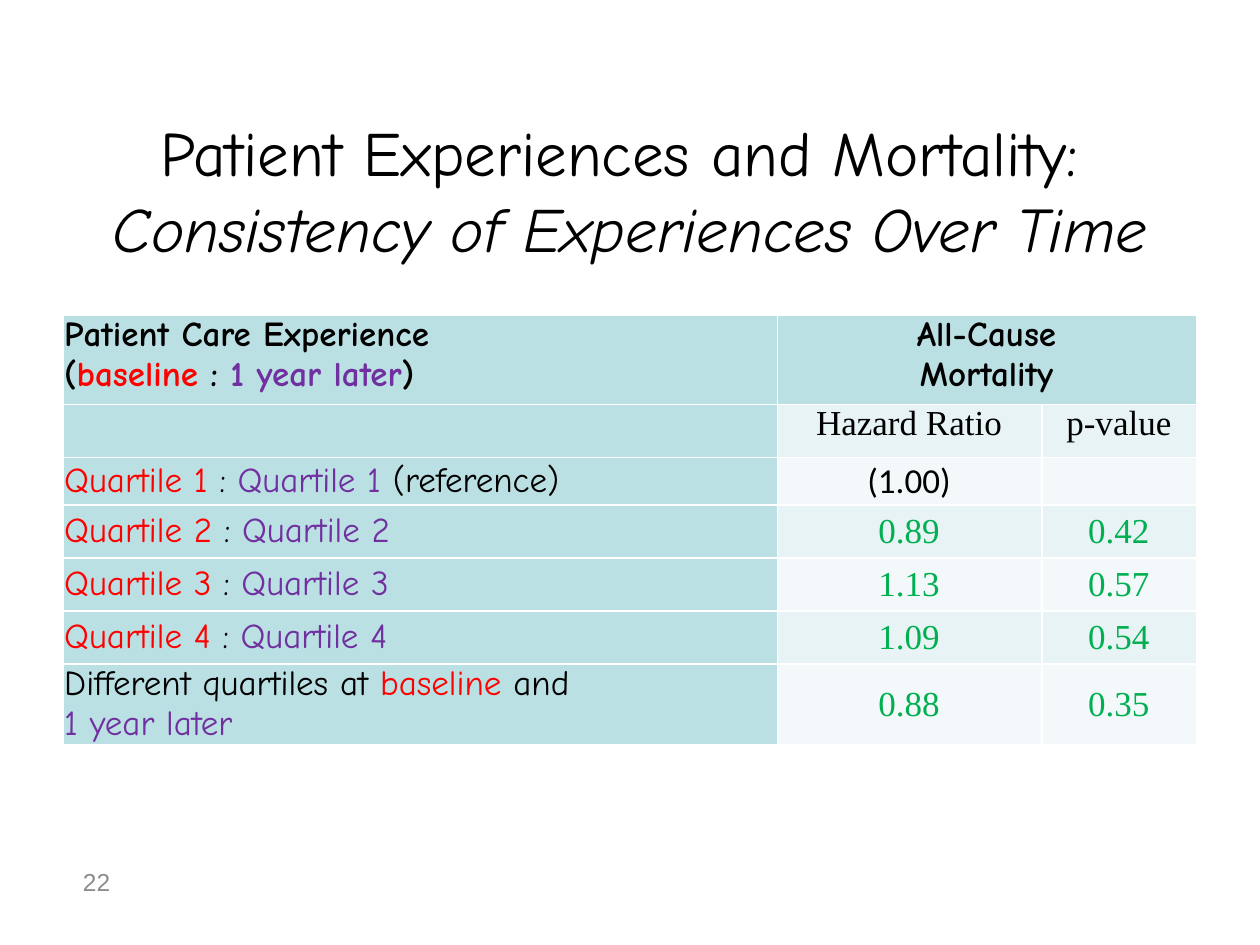
from lxml import etree
from pptx import Presentation
from pptx.dml.color import RGBColor
from pptx.enum.text import MSO_ANCHOR, PP_ALIGN
from pptx.oxml.ns import qn
from pptx.util import Inches, Pt

CENTER, LEFT = PP_ALIGN.CENTER, PP_ALIGN.LEFT
TOP, MIDDLE = MSO_ANCHOR.TOP, MSO_ANCHOR.MIDDLE

BLACK = RGBColor(0x00, 0x00, 0x00)
RED = RGBColor(0xFF, 0x00, 0x00)
PURPLE = RGBColor(0x70, 0x30, 0xA0)
GREEN = RGBColor(0x00, 0xB0, 0x50)
GRAY = RGBColor(0x8C, 0x8C, 0x8C)
TEAL = RGBColor(0xBB, 0xE0, 0xE3)
BANDS = (RGBColor(0xF3, 0xF9, 0xFA), RGBColor(0xE7, 0xF3, 0xF4))

COMIC, TIMES, SANS, ARIAL = "Comic Neue", "Times New Roman", "Calibri", "Arial"

COLUMN_WIDTHS = (5.67, 2.1, 1.23)
ROW_HEIGHTS = (0.71, 0.42, 0.38, 0.42, 0.42, 0.42, 0.43)
RESULTS = (("0.89", "0.42"), ("1.13", "0.57"), ("1.09", "0.54"), ("0.88", "0.35"))


def place(shape, left, top, width, height):
    shape.left, shape.top = Inches(left), Inches(top)
    shape.width, shape.height = Inches(width), Inches(height)


def set_font(font, name, size, color, bold=False):
    font.name, font.size, font.bold = name, Pt(size), bold
    font.color.rgb = color


def add_title(slide):
    title = slide.shapes.title
    place(title, 0, 0.75, 10, 1.5)
    frame = title.text_frame
    frame.vertical_anchor = MIDDLE
    paragraph = frame.paragraphs[0]
    paragraph.alignment = CENTER
    set_font(paragraph.font, COMIC, 36, BLACK)
    paragraph.add_run().text = "Patient Experiences and Mortality: "
    paragraph.add_line_break()
    subtitle = paragraph.add_run()
    subtitle.text = "Consistency of Experiences Over Time"
    subtitle.font.italic = True


def add_borders(cell):
    properties = cell._tc.get_or_add_tcPr()
    for position, side in enumerate(("lnL", "lnR", "lnT", "lnB")):
        line = etree.Element(qn(f"a:{side}"), w=str(Pt(1)))
        fill = etree.SubElement(line, qn("a:solidFill"))
        etree.SubElement(fill, qn("a:srgbClr"), val="FFFFFF")
        properties.insert(position, line)


def style_cell(cell, fill):
    cell.fill.solid()
    cell.fill.fore_color.rgb = fill
    cell.margin_left, cell.margin_right = Inches(0.01), Inches(0.02)
    cell.margin_top = cell.margin_bottom = 0
    cell.text_frame.paragraphs[0].font.size = Pt(20)
    add_borders(cell)


def write_cell(cell, lines, font=COMIC, bold=False, align=LEFT, anchor=MIDDLE):
    """Write lines, each a list of (text, color) runs."""
    cell.vertical_anchor = anchor
    frame = cell.text_frame
    for number, runs in enumerate(lines):
        paragraph = frame.add_paragraph() if number else frame.paragraphs[0]
        paragraph.alignment = align
        set_font(paragraph.font, font, 20, BLACK, bold)
        for text, color in runs:
            run = paragraph.add_run()
            run.text = text
            set_font(run.font, font, 20, color, bold)


def quartile_label(number):
    return [(f"Quartile {number}", RED), (" : ", BLACK), (f"Quartile {number}", PURPLE)]


def write_header(table):
    write_cell(table.cell(0, 0), [
        [("Patient Care Experience", BLACK)],
        [("(", BLACK), ("baseline", RED), (" : ", BLACK),
         ("1 year later", PURPLE), (")", BLACK)],
    ], bold=True, anchor=TOP)
    write_cell(table.cell(0, 1), [[("All-Cause", BLACK)], [("Mortality", BLACK)]],
               bold=True, align=CENTER, anchor=TOP)
    for column, text in enumerate(("Hazard Ratio", "p-value"), start=1):
        write_cell(table.cell(1, column), [[(text, BLACK)]], TIMES, align=CENTER, anchor=TOP)


def write_body(table):
    reference = quartile_label(1) + [(" ", PURPLE), ("(reference)", BLACK)]
    write_cell(table.cell(2, 0), [reference])
    write_cell(table.cell(2, 1), [[("(1.00)", BLACK)]], SANS, align=CENTER)

    labels = [[quartile_label(number)] for number in (2, 3, 4)]
    labels.append([
        [("Different quartiles at ", BLACK), ("baseline", RED), (" and", BLACK)],
        [("1 year later", PURPLE)],
    ])
    for row, (label, values) in enumerate(zip(labels, RESULTS), start=3):
        write_cell(table.cell(row, 0), label)
        for column, value in enumerate(values, start=1):
            write_cell(table.cell(row, column), [[(value, GREEN)]], TIMES, align=CENTER)


def add_results_table(slide):
    table = slide.shapes.add_table(
        len(ROW_HEIGHTS), len(COLUMN_WIDTHS), Inches(0.5), Inches(2.5),
        Inches(sum(COLUMN_WIDTHS)), Inches(sum(ROW_HEIGHTS))).table
    for column, width in zip(table.columns, COLUMN_WIDTHS):
        column.width = Inches(width)
    for row_number, (row, height) in enumerate(zip(table.rows, ROW_HEIGHTS)):
        row.height = Inches(height)
        for column_number, cell in enumerate(row.cells):
            is_heading = row_number == 0 or column_number == 0
            style_cell(cell, TEAL if is_heading else BANDS[row_number % 2])
    table.cell(0, 1).merge(table.cell(0, 2))
    write_header(table)
    write_body(table)


def add_slide_number(slide):
    box = slide.shapes.add_textbox(Inches(0.56), Inches(6.83), Inches(2.62), Inches(0.52))
    box.text_frame.word_wrap = True
    paragraph = box.text_frame.paragraphs[0]
    paragraph.text = "22"
    set_font(paragraph.font, ARIAL, 14, GRAY)


def main():
    presentation = Presentation()
    presentation.slide_width, presentation.slide_height = Inches(10), Inches(7.5)
    slide = presentation.slides.add_slide(presentation.slide_layouts[5])
    add_title(slide)
    add_results_table(slide)
    add_slide_number(slide)
    presentation.save("out.pptx")


if __name__ == "__main__":
    main()
